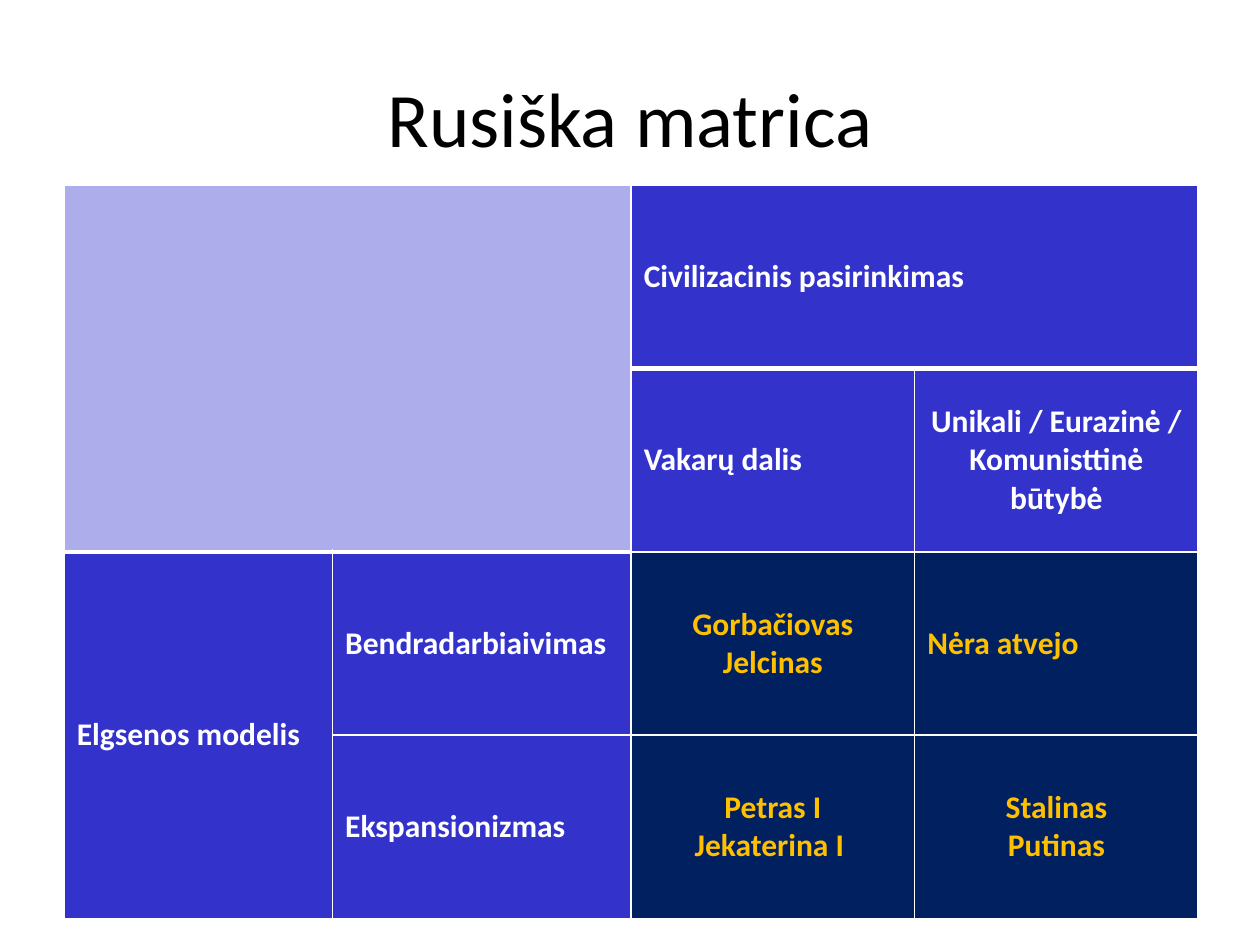
from lxml import etree
from pptx import Presentation
from pptx.dml.color import RGBColor
from pptx.enum.text import MSO_ANCHOR, PP_ALIGN
from pptx.oxml.ns import qn
from pptx.util import Inches, Pt

LEFT, CENTER = PP_ALIGN.LEFT, PP_ALIGN.CENTER
MIDDLE = MSO_ANCHOR.MIDDLE
TITLE_ONLY = 5
WIDTH, HEIGHT = 10, 7.5

COLORS = {
    "black": "000000",
    "white": "FFFFFF",
    "gold": "FFC000",
    "corner": "ADADEB",
    "header": "3333CC",
    "case": "002060",
}

COL_WIDTHS = [2.13, 2.37, 2.25, 2.25]
ROW_COUNT = 4
MERGES = [(0, 0, 1, 1), (0, 2, 0, 3), (2, 0, 3, 0)]
THICK_BELOW = {(0, 0), (0, 1), (0, 2), (0, 3), (1, 0), (1, 1)}

CELLS = {
    (0, 2): (["Civilizacinis pasirinkimas"], LEFT),
    (1, 2): (["Vakarų dalis"], LEFT),
    (1, 3): (["Unikali / Eurazinė / Komunisttinė būtybė"], CENTER),
    (2, 0): (["Elgsenos modelis"], LEFT),
    (2, 1): (["Bendradarbiaivimas"], LEFT),
    (2, 2): (["Gorbačiovas", "Jelcinas"], CENTER),
    (2, 3): (["Nėra atvejo"], LEFT),
    (3, 1): (["Ekspansionizmas"], LEFT),
    (3, 2): (["Petras I", "Jekaterina I "], CENTER),
    (3, 3): (["Stalinas", "Putinas"], CENTER),
}


class Deck:
    font = "Calibri"

    def __init__(self):
        self.prs = Presentation()
        self.prs.slide_width = Inches(WIDTH)
        self.prs.slide_height = Inches(HEIGHT)
        self.s = self.prs.slides.add_slide(self.prs.slide_layouts[TITLE_ONLY])

    def box(self, x, y, w, h):
        sw, sh = self.prs.slide_width, self.prs.slide_height
        return int(x * sw), int(y * sh), int(w * sw), int(h * sh)

    def add_lines(self, tf, lines, size, color, align, bold=False):
        for i, line in enumerate(lines):
            p = tf.paragraphs[0] if i == 0 else tf.add_paragraph()
            p.alignment = align
            r = p.add_run()
            r.text = line
            r.font.name = self.font
            r.font.size = Pt(size)
            r.font.bold = bold
            r.font.color.rgb = RGBColor.from_string(COLORS[color])

    def title(self, text, x, y, w, h):
        sp = self.s.shapes.title
        sp.left, sp.top, sp.width, sp.height = self.box(x, y, w, h)
        sp.text_frame.vertical_anchor = MIDDLE
        self.add_lines(sp.text_frame, [text], 44, "black", CENTER)

    def borders(self, cell, widths):
        tc_pr = cell._tc.get_or_add_tcPr()
        for side, width in widths.items():
            ln = etree.SubElement(tc_pr, qn(f"a:ln{side}"), w=str(int(Pt(width))))
            fill = etree.SubElement(ln, qn("a:solidFill"))
            etree.SubElement(fill, qn("a:srgbClr"), val=COLORS["white"])

    def matrix(self, x, y, w, h):
        frame = self.s.shapes.add_table(
            ROW_COUNT, len(COL_WIDTHS), *self.box(x, y, w, h))
        table = frame.table
        total = frame.width
        for col, width in zip(table.columns, COL_WIDTHS):
            col.width = int(total * width / sum(COL_WIDTHS))
        for row in range(ROW_COUNT):
            for col in range(len(COL_WIDTHS)):
                self.cell(table.cell(row, col), row, col)
        for top, left, bottom, right in MERGES:
            table.cell(top, left).merge(table.cell(bottom, right))

    def cell(self, cell, row, col):
        self.borders(cell, {
            "L": 1,
            "R": 1,
            "T": 3 if (row - 1, col) in THICK_BELOW else 1,
            "B": 3 if (row, col) in THICK_BELOW else 1,
        })
        is_case = row >= 2 and col >= 2
        is_corner = row < 2 and col < 2
        kind = "case" if is_case else "corner" if is_corner else "header"
        cell.fill.solid()
        cell.fill.fore_color.rgb = RGBColor.from_string(COLORS[kind])
        cell.vertical_anchor = MIDDLE
        if (row, col) in CELLS:
            lines, align = CELLS[row, col]
            color = "gold" if is_case else "white"
            self.add_lines(cell.text_frame, lines, 18, color, align, bold=True)


def main():
    deck = Deck()
    deck.title("Rusiška matrica", 0.05, 0.04, 0.9, 1.25 / HEIGHT)
    deck.matrix(0.51 / WIDTH, 1.47 / HEIGHT, 0.9, 5.82 / HEIGHT)
    deck.prs.save("out.pptx")


if __name__ == "__main__":
    main()
